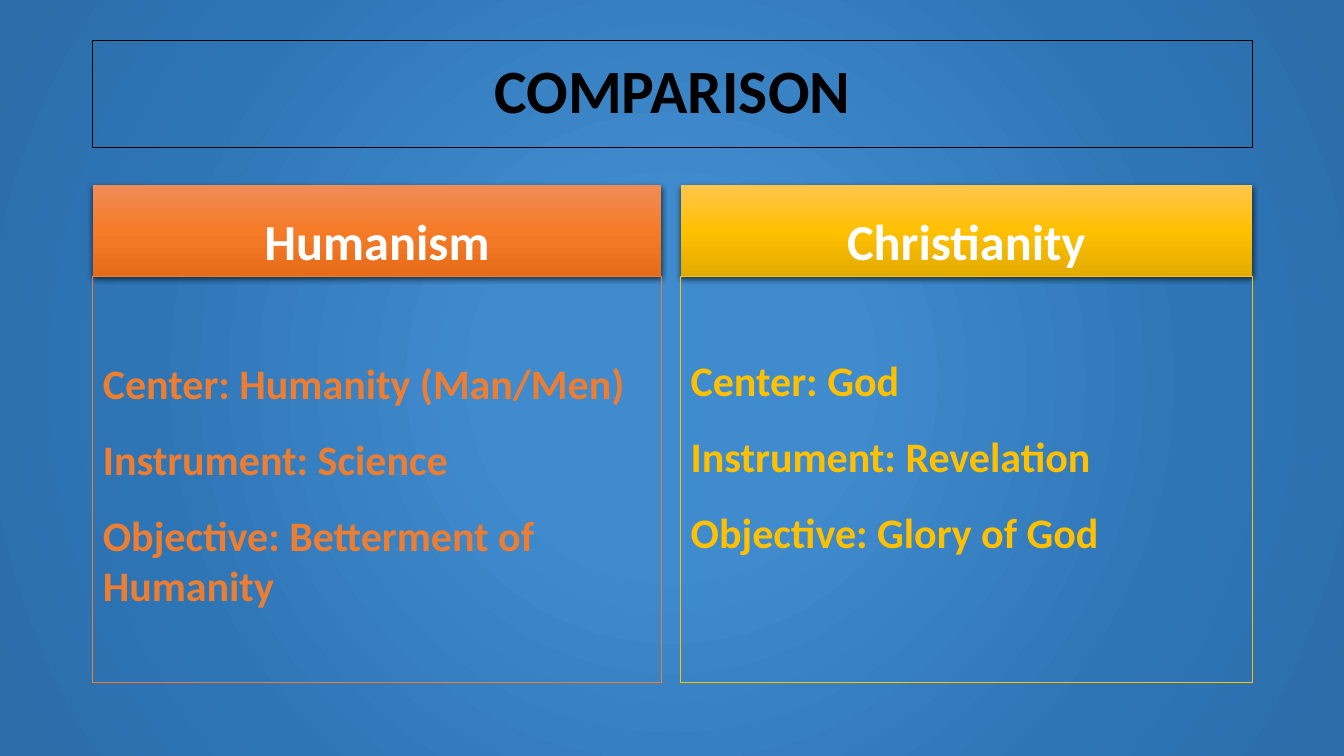
from lxml import etree
from pptx import Presentation
from pptx.dml.color import RGBColor
from pptx.enum import text
from pptx.oxml import parse_xml
from pptx.oxml.ns import nsdecls, qn
from pptx.util import Inches, Pt

COLORS = {
    "black": "000000", "white": "FFFFFF",
    "orange": "ED7D31", "orange_edge": "843C0B",
    "gold": "FFC000", "gold_edge": "806000",
}
BACKGROUND = [(0, "408BCE"), (23, "408BCE"), (69, "2E75B6"), (97, "2B6DA9")]
ORANGE_BAND = [(0, "F18C57"), (50, "F67B28"), (100, "E56C19")]
GOLD_BAND = [(0, "FFC64B"), (50, "FFC000"), (100, "E3AB00")]
LINEAR = '<a:lin ang="5400000" scaled="0"/>'
RADIAL = '<a:path path="circle"><a:fillToRect l="50000" t="50000" r="50000" b="50000"/></a:path>'


def set_gradient(fill, root, stops, direction):
    fill.gradient()
    old = next(root.iter(qn("a:gradFill")))
    gs = "".join(f'<a:gs pos="{pos * 1000}"><a:srgbClr val="{c}"/></a:gs>' for pos, c in stops)
    new = parse_xml(f'<a:gradFill {nsdecls("a")} rotWithShape="1">'
                    f'<a:gsLst>{gs}</a:gsLst>{direction}</a:gradFill>')
    old.getparent().replace(old, new)


def add_text(p, words, size, color):
    r = p.add_run()
    r.text = words
    r.font.name = "Calibri"
    r.font.size = Pt(size)
    r.font.bold = True
    r.font.color.rgb = RGBColor.from_string(COLORS[color])
    return r


prs = Presentation()
prs.slide_width, prs.slide_height = Inches(13.33), Inches(7.5)
s = prs.slides.add_slide(prs.slide_layouts[4])
set_gradient(s.background.fill, s._element, BACKGROUND, RADIAL)
title, left_head, left_body, right_head, right_body = list(s.placeholders)[:5]

boxes = [
    (title, 0.92, 0.4, 11.5, 1.06, "black", text.MSO_ANCHOR.MIDDLE),
    (left_head, 0.92, 1.84, 5.64, 0.9, None, text.MSO_ANCHOR.BOTTOM),
    (left_body, 0.92, 2.74, 5.64, 4.03, "orange", text.MSO_ANCHOR.TOP),
    (right_head, 6.75, 1.84, 5.67, 0.9, None, text.MSO_ANCHOR.BOTTOM),
    (right_body, 6.75, 2.74, 5.67, 4.03, "gold", text.MSO_ANCHOR.TOP),
]
for sp, x, y, w, h, line, anchor in boxes:
    sp.left, sp.top, sp.width, sp.height = Inches(x), Inches(y), Inches(w), Inches(h)
    sp.text_frame.auto_size = text.MSO_AUTO_SIZE.NONE
    sp.text_frame.vertical_anchor = anchor
    if line:
        sp.line.color.rgb = RGBColor.from_string(COLORS[line])
        sp.line.width = Pt(0.75)

headings = [
    (title, "COMPARISON", 44, "black", None),
    (left_head, "Humanism", 36, "white", ORANGE_BAND),
    (right_head, "Christianity", 36, "white", GOLD_BAND),
]
for sp, words, size, color, band in headings:
    p = sp.text_frame.paragraphs[0]
    p.alignment = text.PP_ALIGN.CENTER
    p.line_spacing = 0.9
    p.space_before = Pt(0)
    add_text(p, words, size, color)
    if band:
        set_gradient(sp.fill, sp._element.spPr, band, LINEAR)
        sp._element.spPr.append(parse_xml(
            f'<a:effectLst {nsdecls("a")}><a:outerShdw blurRad="57150" dist="19050" '
            'dir="5400000" algn="ctr" rotWithShape="0"><a:srgbClr val="000000">'
            '<a:alpha val="63000"/></a:srgbClr></a:outerShdw></a:effectLst>'))

lists = [
    (left_body, "orange", 0.81,
     ["Center: Humanity (Man/Men)", "Instrument: Science", "Objective: Betterment of Humanity"]),
    (right_body, "gold", 0.78,
     ["Center: God", "Instrument: Revelation", "Objective: Glory of God"]),
]
for sp, color, inset, items in lists:
    tf = sp.text_frame
    tf.margin_top = Inches(inset)
    for i, item in enumerate(items):
        p = tf.add_paragraph() if i else tf.paragraphs[0]
        p.line_spacing = 1.0
        p.space_before = Pt(18 if i else 0)
        pPr = p._p.get_or_add_pPr()
        pPr.set("marL", "0")
        pPr.set("indent", "0")
        etree.SubElement(pPr, qn("a:buNone"))
        r = add_text(p, item, 30, color)
        r._r.get_or_add_rPr().insert(0, parse_xml(
            f'<a:ln {nsdecls("a")} w="9525"><a:solidFill>'
            f'<a:srgbClr val="{COLORS[color + "_edge"]}"/></a:solidFill></a:ln>'))

for sp in list(s.placeholders)[5:]:
    sp._element.getparent().remove(sp._element)

prs.save("out.pptx")
